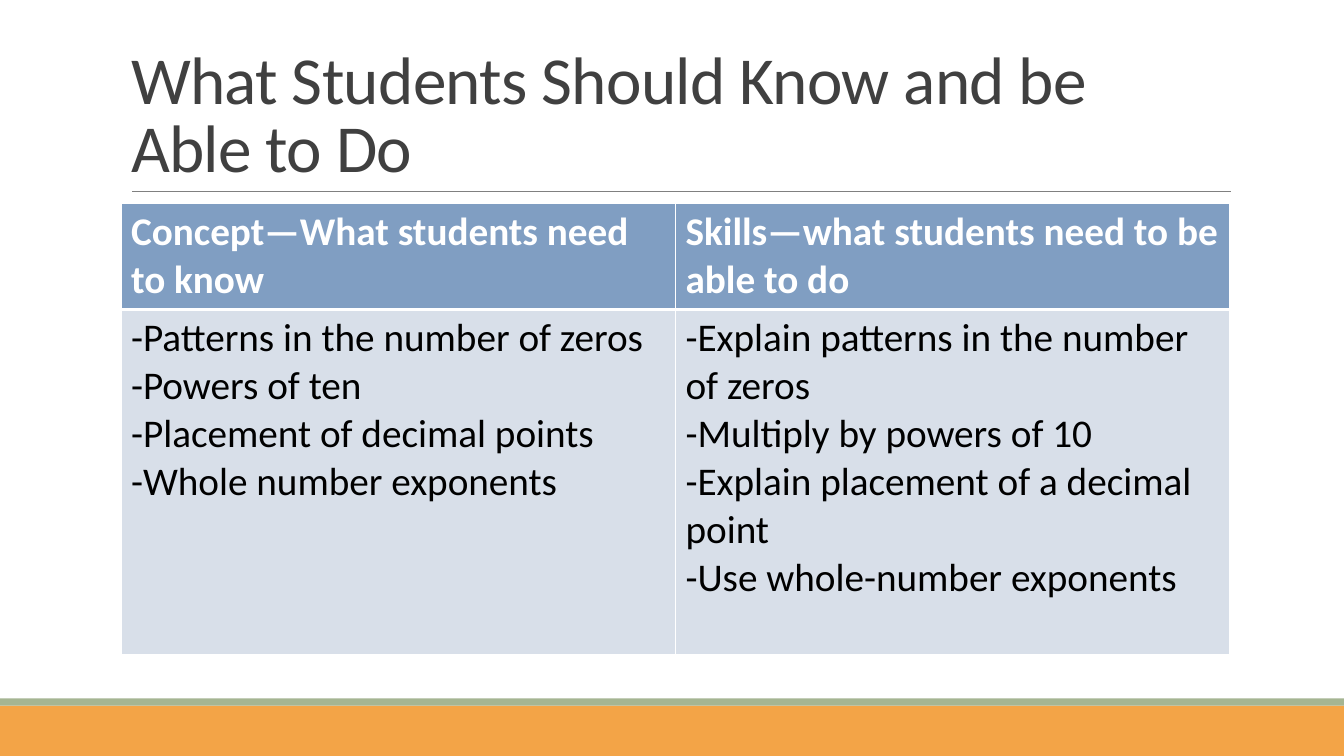
from lxml.etree import SubElement
from pptx import Presentation
from pptx.dml.color import RGBColor
from pptx.enum.shapes import MSO_CONNECTOR as Connector, MSO_SHAPE as Preset
from pptx.enum.text import MSO_ANCHOR as Anchor, MSO_AUTO_SIZE as AutoSize, PP_ALIGN as Align
from pptx.oxml import parse_xml
from pptx.oxml.ns import nsdecls, qn
from pptx.util import Inches, Pt

COLORS = {"orange": "F3A447", "green": "A5B592", "rule": "808080", "title": "404040",
          "header": "809EC2", "body": "D8DFE9", "white": "FFFFFF", "black": "000000"}

HEADINGS = ["Concept—What students need to know",
            "Skills—what students need to be able to do"]
CONCEPTS = ["-Patterns in the number of zeros", "-Powers of ten",
            "-Placement of decimal points", "-Whole number exponents"]
SKILLS = ["-Explain patterns in the number of zeros", "-Multiply by powers of 10",
          "-Explain placement of a decimal point", "-Use whole-number exponents"]


class SlideBuilder:
    """Holds the shared style and the current slide, and adds elements to it."""

    def __init__(self, slide, font="Calibri"):
        self.slide = slide
        self.font = font

    def color(self, name):
        return RGBColor.from_string(COLORS[name])

    def style(self, paragraph, size, color, bold=False):
        font = paragraph.font
        font.name, font.size, font.bold = self.font, Pt(size), bold
        font.color.rgb = self.color(color)

    def band(self, top, height, color):
        band = self.slide.shapes.add_shape(
            Preset.RECTANGLE, 0, Inches(top), Inches(13.33), Inches(height))
        band.shadow.inherit = False
        band.fill.solid()
        band.fill.fore_color.rgb = self.color(color)
        band.line.fill.background()

    def rule(self, left, right, y):
        rule = self.slide.shapes.add_connector(
            Connector.STRAIGHT, Inches(left), Inches(y), Inches(right), Inches(y))
        rule.line.color.rgb = self.color("rule")
        rule.line.width = Pt(0.5)
        SubElement(rule._element.spPr, qn("a:effectLst"))

    def title(self, text, left, top, width, height):
        title = self.slide.shapes.title
        title.left, title.top = Inches(left), Inches(top)
        title.width, title.height = Inches(width), Inches(height)
        frame = title.text_frame
        frame.text = text
        frame.word_wrap = True
        frame.auto_size = AutoSize.NONE
        frame.vertical_anchor = Anchor.BOTTOM
        heading = frame.paragraphs[0]
        heading.alignment = Align.LEFT
        heading.line_spacing = 0.85
        self.style(heading, 48, "title")
        heading.runs[0].font._element.set("spc", "-50")

    def borders(self, cell, **widths):
        properties = cell._tc.get_or_add_tcPr()
        for index, (side, width) in enumerate(widths.items()):
            properties.insert(index, parse_xml(
                f'<a:ln{side} {nsdecls("a")} w="{Pt(width)}"><a:solidFill>'
                f'<a:srgbClr val="{COLORS["white"]}"/></a:solidFill></a:ln{side}>'))

    def cell(self, cell, lines, fill, color, bold, top, bottom):
        cell.text = "\n".join(lines)
        for paragraph in cell.text_frame.paragraphs:
            self.style(paragraph, 28, color, bold)
        cell.fill.solid()
        cell.fill.fore_color.rgb = self.color(fill)
        self.borders(cell, L=1, R=1, T=top, B=bottom)

    def table(self, headings, columns, left, top, width, row_heights):
        table = self.slide.shapes.add_table(
            2, len(headings), Inches(left), Inches(top),
            Inches(width), Inches(sum(row_heights))).table
        for row, height in zip(table.rows, row_heights):
            row.height = Inches(height)
        for index, (heading, lines) in enumerate(zip(headings, columns)):
            self.cell(table.cell(0, index), [heading], "header", "white", True, 1, 3)
            self.cell(table.cell(1, index), lines, "body", "black", False, 3, 1)


def main():
    deck = Presentation()
    deck.slide_width, deck.slide_height = Inches(13.33), Inches(7.5)
    builder = SlideBuilder(deck.slides.add_slide(deck.slide_layouts[5]))
    builder.band(7, 0.5, "orange")
    builder.band(6.93, 0.07, "green")
    builder.rule(1.31, 12.21, 1.9)
    builder.title("What Students Should Know and be Able to Do", 1.2, 0.31, 11, 1.59)
    builder.table(HEADINGS, [CONCEPTS, SKILLS], 1.2, 2.02, 11, [1.04, 3.42])
    deck.save("out.pptx")


if __name__ == "__main__":
    main()
